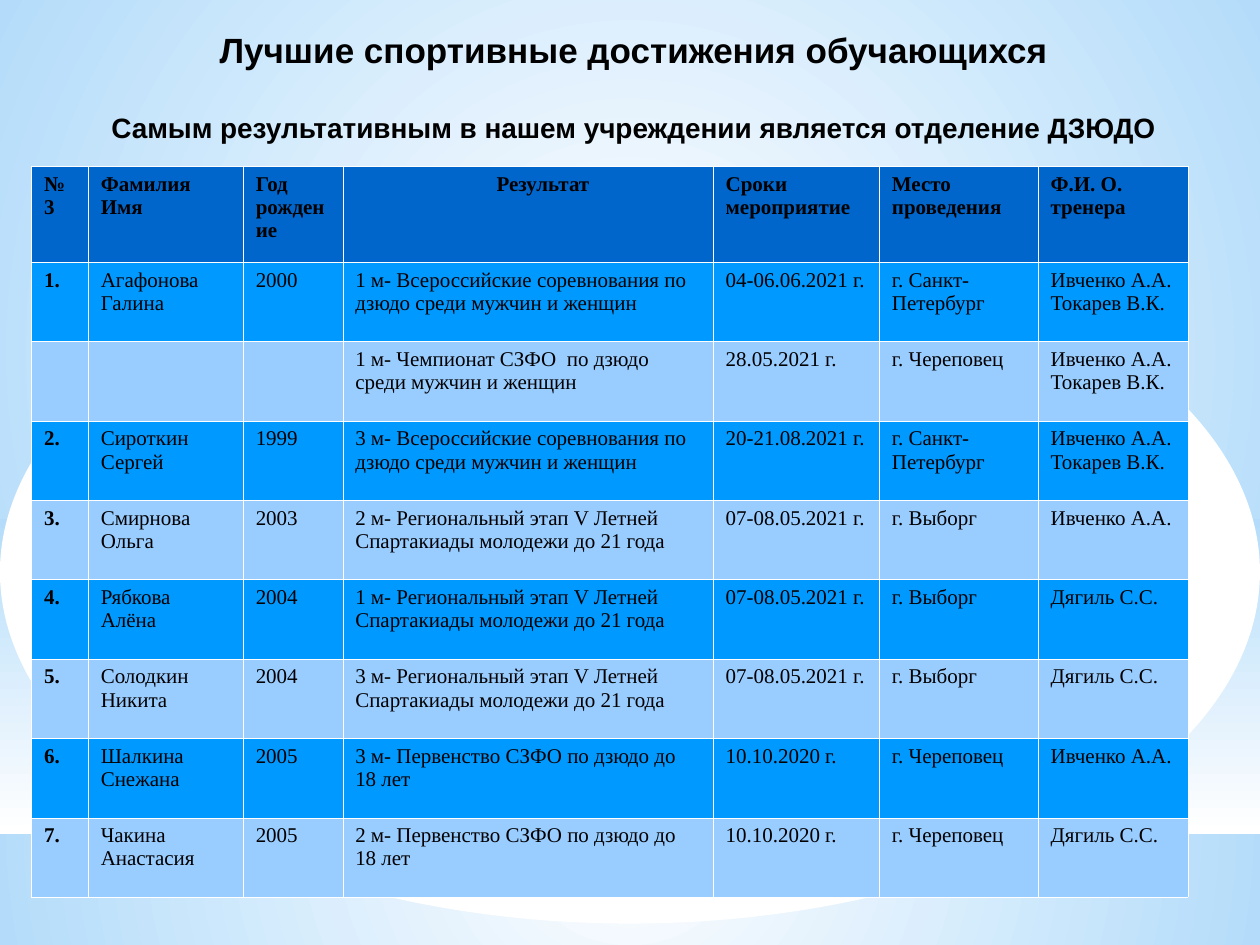
from lxml import etree
from pptx import Presentation
from pptx.dml.color import RGBColor
from pptx.enum.shapes import MSO_SHAPE
from pptx.enum.text import MSO_ANCHOR, PP_ALIGN
from pptx.oxml.ns import qn
from pptx.util import Inches, Pt

RECT, OVAL = MSO_SHAPE.RECTANGLE, MSO_SHAPE.OVAL
CENTER, LEFT = PP_ALIGN.CENTER, PP_ALIGN.LEFT
MIDDLE = MSO_ANCHOR.MIDDLE

BLACK = RGBColor(0x00, 0x00, 0x00)
WHITE = RGBColor(0xFF, 0xFF, 0xFF)
SKY = RGBColor(0xB4, 0xDC, 0xFA)
HEADER_BLUE = RGBColor(0x00, 0x66, 0xCC)
BAND_DARK = RGBColor(0x00, 0x99, 0xFF)
BAND_LIGHT = RGBColor(0x99, 0xCC, 0xFF)

COL_WIDTHS = [0.45, 1.23, 0.79, 2.94, 1.32, 1.26, 1.19]
HEADER_HEIGHT, ROW_HEIGHT = 0.76, 0.63
RESULT_COL = 3
BORDER_WIDTH = Pt(0.06)

RUSSIAN_CUP = "Всероссийские соревнования по дзюдо среди мужчин и женщин"
DISTRICT_CUP = "Чемпионат СЗФО  по дзюдо среди мужчин и женщин"
SPARTAKIAD = "Региональный этап V Летней Спартакиады молодежи до 21 года"
JUNIOR_CUP = "Первенство СЗФО по дзюдо до 18 лет"
BOTH_COACHES = "Ивченко А.А.\nТокарев В.К."

HEADER = ["№3", "Фамилия Имя", "Год\nрождение", "Результат",
          "Сроки\nмероприятие", "Место проведения", "Ф.И. О.\nтренера"]
RESULTS = [
    ["1.", "Агафонова Галина", "2000", f"1 м- {RUSSIAN_CUP}",
     "04-06.06.2021 г.", "г. Санкт-Петербург", BOTH_COACHES],
    ["", "", "", f"1 м- {DISTRICT_CUP}",
     "28.05.2021 г.", "г. Череповец", BOTH_COACHES],
    ["2.", "Сироткин Сергей", "1999", f"3 м- {RUSSIAN_CUP}",
     "20-21.08.2021 г.", "г. Санкт-Петербург", BOTH_COACHES],
    ["3.", "Смирнова Ольга", "2003", f"2 м- {SPARTAKIAD}",
     "07-08.05.2021 г.", "г. Выборг", "Ивченко А.А."],
    ["4.", "Рябкова Алёна", "2004", f"1 м- {SPARTAKIAD}",
     "07-08.05.2021 г.", "г. Выборг", "Дягиль С.С."],
    ["5.", "Солодкин Никита", "2004", f"3 м- {SPARTAKIAD}",
     "07-08.05.2021 г.", "г. Выборг", "Дягиль С.С."],
    ["6.", "Шалкина Снежана", "2005", f"3 м- {JUNIOR_CUP}",
     "10.10.2020 г.", "г. Череповец", "Ивченко А.А."],
    ["7.", "Чакина Анастасия", "2005", f"2 м- {JUNIOR_CUP}",
     "10.10.2020 г.", "г. Череповец", "Дягиль С.С."],
]


def write_text(p, text, font="Times New Roman", size=12, bold=False,
               color=BLACK, align=LEFT, before=0):
    p.alignment = align
    p.space_before = Pt(before)
    r = p.add_run()
    r.text = text
    r.font.name = font
    r.font.size = Pt(size)
    r.font.bold = bold
    r.font.color.rgb = color


def add_plain_shape(s, kind, x, y, w, h):
    sp = s.shapes.add_shape(kind, Inches(x), Inches(y), Inches(w), Inches(h))
    sp.shadow.inherit = False
    sp.line.fill.background()
    return sp


def fill_gradient(sp, start, end, radial=False):
    sp.fill.gradient()
    for stop, color, position in zip(sp.fill.gradient_stops, (start, end), (0, 1)):
        stop.color.rgb = color
        stop.position = position
    sp.fill.gradient_angle = 270
    if radial:
        grad = sp.fill._xPr.find(qn("a:gradFill"))
        grad.remove(grad.find(qn("a:lin")))
        circle = etree.SubElement(grad, qn("a:path"), {"path": "circle"})
        etree.SubElement(circle, qn("a:fillToRect"), dict.fromkeys("ltrb", "0"))


def add_background(s):
    for y, h in ((5.58, 1.92), (0, 5.58)):
        fill_gradient(add_plain_shape(s, RECT, 0, y, 10, h), WHITE, SKY, radial=True)
    fill_gradient(add_plain_shape(s, RECT, 0, 4.12, 10, 2.5), SKY, WHITE)
    oval = add_plain_shape(s, OVAL, 0, 1.75, 10, 5.58)
    oval.fill.solid()
    oval.fill.fore_color.rgb = WHITE


def add_title(s):
    box = s.shapes.add_textbox(Inches(0.53), Inches(0.23), Inches(9), Inches(0.91))
    tf = box.text_frame
    tf.word_wrap = True
    tf.vertical_anchor = MIDDLE
    tf.margin_left = tf.margin_right = tf.margin_top = tf.margin_bottom = 0
    write_text(tf.paragraphs[0], "Лучшие спортивные достижения обучающихся",
               font="Arial", size=20, bold=True, align=CENTER)
    write_text(tf.add_paragraph(),
               "Самым результативным в нашем учреждении является отделение ДЗЮДО",
               font="Arial", size=16, bold=True, align=CENTER, before=23)


def set_borders(cell):
    tc_pr = cell._tc.get_or_add_tcPr()
    for i, side in enumerate(("lnL", "lnR", "lnT", "lnB")):
        ln = etree.Element(qn(f"a:{side}"), {"w": str(BORDER_WIDTH)})
        solid = etree.SubElement(ln, qn("a:solidFill"))
        etree.SubElement(solid, qn("a:srgbClr"), {"val": str(WHITE)})
        tc_pr.insert(i, ln)


def fill_cell(cell, text, fill, **style):
    cell.fill.solid()
    cell.fill.fore_color.rgb = fill
    set_borders(cell)
    if not text:
        return
    tf = cell.text_frame
    for i, line in enumerate(text.split("\n")):
        p = tf.add_paragraph() if i else tf.paragraphs[0]
        write_text(p, line, **style)


def add_results_table(s):
    rows = [HEADER] + RESULTS
    heights = [HEADER_HEIGHT] + [ROW_HEIGHT] * len(RESULTS)
    table = s.shapes.add_table(len(rows), len(COL_WIDTHS), Inches(0.25), Inches(1.32),
                               Inches(sum(COL_WIDTHS)), Inches(sum(heights))).table
    for column, width in zip(table.columns, COL_WIDTHS):
        column.width = Inches(width)
    for r, (texts, height) in enumerate(zip(rows, heights)):
        table.rows[r].height = Inches(height)
        fill = HEADER_BLUE if r == 0 else BAND_DARK if r % 2 else BAND_LIGHT
        for c, text in enumerate(texts):
            align = CENTER if r == 0 and c == RESULT_COL else LEFT
            fill_cell(table.cell(r, c), text, fill, bold=r == 0 or c == 0, align=align)
    # The result heading sits slightly right of the column centre
    table.cell(0, RESULT_COL).margin_left = Inches(0.34)


def main():
    prs = Presentation()
    prs.slide_width, prs.slide_height = Inches(10), Inches(7.5)
    s = prs.slides.add_slide(prs.slide_layouts[6])
    add_background(s)
    add_title(s)
    add_results_table(s)
    prs.save("out.pptx")


if __name__ == "__main__":
    main()
